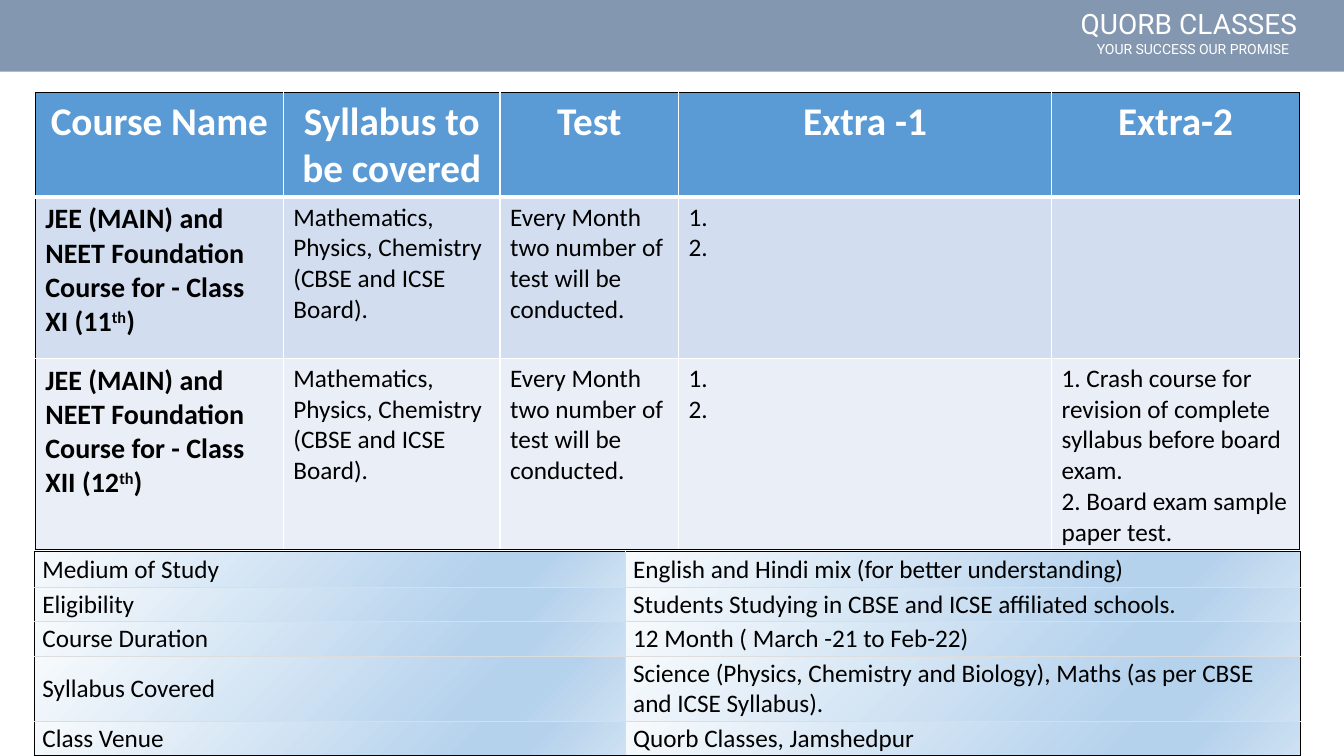
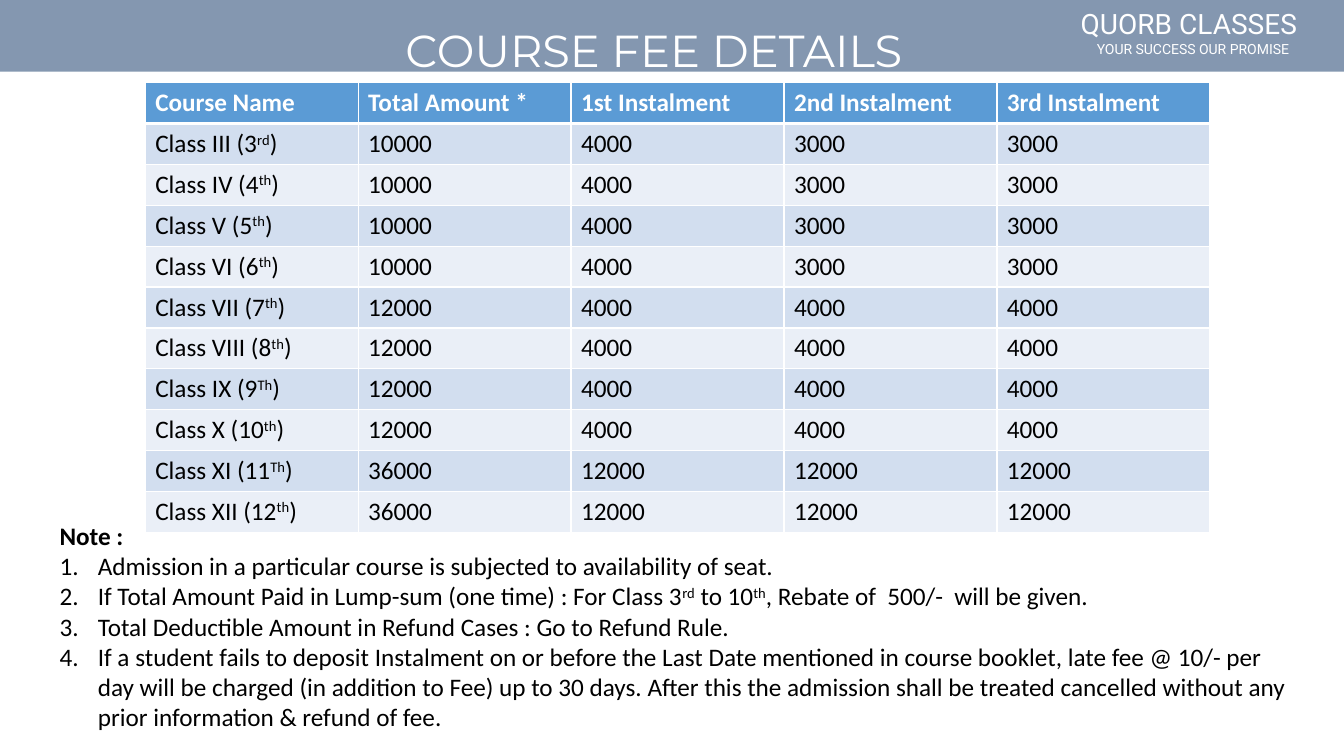
from lxml import etree
from pptx import Presentation
from pptx.dml.color import RGBColor
from pptx.enum.shapes import MSO_SHAPE
from pptx.enum.text import MSO_ANCHOR, MSO_AUTO_SIZE, PP_ALIGN
from pptx.oxml.ns import qn
from pptx.util import Inches, Pt

RECTANGLE = MSO_SHAPE.RECTANGLE
TOP, MIDDLE = MSO_ANCHOR.TOP, MSO_ANCHOR.MIDDLE
FIT_SHAPE, NO_FIT = MSO_AUTO_SIZE.SHAPE_TO_FIT_TEXT, MSO_AUTO_SIZE.NONE
LEFT, CENTER = PP_ALIGN.LEFT, PP_ALIGN.CENTER

SLIDE_WIDTH, SLIDE_HEIGHT = 13.33, 7.5
CONTENT_LAYOUT, BLANK_LAYOUT = 1, 6

WHITE = RGBColor(0xFF, 0xFF, 0xFF)
BLACK = RGBColor(0x00, 0x00, 0x00)
SLATE = RGBColor(0x84, 0x97, 0xB0)
HEADER_BLUE = RGBColor(0x5B, 0x9B, 0xD5)
BAND_DARK = RGBColor(0xD2, 0xDE, 0xEF)
BAND_LIGHT = RGBColor(0xEA, 0xEF, 0xF7)
GRID_GRAY = RGBColor(0xDD, 0xDD, 0xDD)
GRADIENT_STOPS = (
    (0, RGBColor(0xF7, 0xFA, 0xFD)),
    (74, RGBColor(0xB5, 0xD2, 0xEC)),
    (83, RGBColor(0xB5, 0xD2, 0xEC)),
    (100, RGBColor(0xCE, 0xE1, 0xF2)),
)
GRADIENT_ANGLE = 45

BODY_FONT = {"name": "Calibri", "size": Pt(18), "bold": False}
COURSE_FONT = {**BODY_FONT, "size": Pt(20), "bold": True}
HEADING_FONT = {**BODY_FONT, "bold": True}
BIG_HEADING_FONT = {**HEADING_FONT, "size": Pt(28)}
TITLE_FONT = {"name": "Montserrat", "size": Pt(32), "bold": False}
BRAND_FONT = {"name": "Roboto", "size": Pt(20)}
MOTTO_FONT = {"name": "Roboto", "size": Pt(10)}

THIN_WHITE, THICK_WHITE = (WHITE, 1), (WHITE, 3)
THIN_BLACK, THIN_GRAY = (BLACK, 1), (GRID_GRAY, 0.75)

SUBJECTS = "Mathematics, Physics, Chemistry (CBSE and ICSE Board)."
TESTS = "Every Month two number of test will be conducted."
COURSE_ROWS = [
    ["Course Name", "Syllabus to be covered", "Test", "Extra -1", "Extra-2"],
    ["JEE (MAIN) and NEET Foundation Course for - Class XI (11^th^)",
     SUBJECTS, TESTS, "1.\n2.", ""],
    ["JEE (MAIN) and NEET Foundation Course for - Class XII (12^th^)",
     SUBJECTS, TESTS, "1.\n2.",
     "1. Crash course for revision of complete syllabus before board exam.\n"
     "2. Board exam sample paper test."],
]
INFORMATION_ROWS = [
    ["Medium of Study", "English and Hindi mix (for better understanding)"],
    ["Eligibility", "Students Studying in CBSE and ICSE affiliated schools."],
    ["Course Duration", "12 Month ( March -21 to Feb-22)"],
    ["Syllabus Covered",
     "Science (Physics, Chemistry and Biology), Maths (as per CBSE and ICSE Syllabus)."],
    ["Class Venue", "Quorb Classes, Jamshedpur"],
]
FEE_HEADINGS = ["Course Name", "Total Amount *", "1st Instalment",
                "2nd Instalment", "3rd Instalment"]
FEE_GROUPS = [
    (["III (3^rd^)", "IV (4^th^)", "V (5^th^)", "VI (6^th^)"], [4000, 3000, 3000]),
    (["VII (7^th^)", "VIII (8^th^)", "IX (9^Th^)", "X (10^th^)"], [4000, 4000, 4000]),
    (["XI (11^Th^)", "XII (12^th^)"], [12000, 12000, 12000]),
]
NOTES = [
    "Admission in a particular course is subjected to availability of seat.",
    "If Total Amount Paid in Lump-sum (one time) : For Class 3^rd^ to 10^th^, "
    "Rebate of  500/-  will be given.",
    "Total Deductible Amount in Refund Cases : Go to Refund Rule.",
    "If a student fails to deposit Instalment on or before the Last Date mentioned in "
    "course booklet, late fee @ 10/- per day will be charged (in addition to Fee) up to "
    "30 days. After this the admission shall be treated cancelled without any prior "
    "information & refund of fee.",
]


def set_attributes(target, values):
    for name, value in values.items():
        setattr(target, name, value)


def write_paragraph(paragraph, text, font, color, align=LEFT):
    """Write text in which ^marks^ enclose superscripts."""
    paragraph.alignment = align
    for index, part in enumerate(text.split("^")):
        if not part:
            continue
        run = paragraph.add_run()
        run.text = part
        set_attributes(run.font, font)
        run.font.color.rgb = color
        if index % 2:
            run._r.get_or_add_rPr().set("baseline", "30000")


def write_lines(frame, lines, font, color, align=LEFT):
    for index, line in enumerate(lines):
        paragraph = frame.add_paragraph() if index else frame.paragraphs[0]
        write_paragraph(paragraph, line, font, color, align)


def place(shape, box):
    lengths = [Inches(value) for value in box]
    set_attributes(shape, dict(zip(("left", "top", "width", "height"), lengths)))


def add_color(parent, color):
    etree.SubElement(parent, qn("a:srgbClr"), val=str(color))


def set_borders(cell, borders):
    """Set the left, right, top and bottom lines, each a colour and a width."""
    properties = cell._tc.get_or_add_tcPr()
    for index, (side, (color, width)) in enumerate(zip("LRTB", borders)):
        line = etree.Element(qn(f"a:ln{side}"), w=str(Pt(width)))
        add_color(etree.SubElement(line, qn("a:solidFill")), color)
        properties.insert(index, line)


def set_gradient(cell):
    gradient = etree.SubElement(cell._tc.get_or_add_tcPr(), qn("a:gradFill"))
    stops = etree.SubElement(gradient, qn("a:gsLst"))
    for position, color in GRADIENT_STOPS:
        add_color(etree.SubElement(stops, qn("a:gs"), pos=str(position * 1000)), color)
    etree.SubElement(gradient, qn("a:lin"), ang=str(GRADIENT_ANGLE * 60000), scaled="0")


def add_grid(slide, box, column_widths, row_heights, rows):
    """Add an empty table and return it with its (row, column, cell, text) entries."""
    lengths = [Inches(value) for value in box]
    table = slide.shapes.add_table(len(rows), len(column_widths), *lengths).table
    table.horz_banding = False
    for column, width in zip(table.columns, column_widths):
        column.width = Inches(width)
    for row, height in zip(table.rows, row_heights):
        row.height = Inches(height)
    entries = [(row, column, table.cell(row, column), text)
               for row, texts in enumerate(rows) for column, text in enumerate(texts)]
    return table, entries


def frame_borders(row, column, last_row, last_column, inner, outer):
    """Give the cell's borders, with the outer line along the edge of the table."""
    return [outer if on_edge else inner for on_edge in
            (column == 0, column == last_column, row == 0, row == last_row)]


def add_banded_table(slide, box, column_widths, row_heights, rows,
                     heading_font, heading_align, first_font, outer):
    table, entries = add_grid(slide, box, column_widths, row_heights, rows)
    for row, column, cell, text in entries:
        borders = frame_borders(row, column, len(rows) - 1, len(column_widths) - 1,
                                THIN_WHITE, outer)
        if row == 0:
            fill, font, color, align = HEADER_BLUE, heading_font, WHITE, heading_align
            borders[3] = THICK_WHITE
        else:
            fill = BAND_DARK if row % 2 else BAND_LIGHT
            font = BODY_FONT if column else first_font
            color, align = BLACK, LEFT
        cell.fill.solid()
        cell.fill.fore_color.rgb = fill
        set_borders(cell, borders)
        write_lines(cell.text_frame, text.split("\n"), font, color, align)


def add_information_table(slide, box, column_widths, row_heights, rows):
    table, entries = add_grid(slide, box, column_widths, row_heights, rows)
    table.first_row = False
    cell_format = {"vertical_anchor": MIDDLE,
                   "margin_left": Inches(0.08), "margin_right": Inches(0.08),
                   "margin_top": Inches(0.02), "margin_bottom": Inches(0.02)}
    for row, column, cell, text in entries:
        set_attributes(cell, cell_format)
        set_gradient(cell)
        set_borders(cell, frame_borders(row, column, len(rows) - 1, 1,
                                        THIN_GRAY, THIN_BLACK))
        write_lines(cell.text_frame, [text], BODY_FONT, BLACK)


def add_brand_text(slide, box, text, font):
    shape = slide.shapes.add_textbox(*[Inches(value) for value in box])
    set_attributes(shape.text_frame, {"word_wrap": True, "auto_size": FIT_SHAPE})
    write_lines(shape.text_frame, [text], font, WHITE)
    return shape


def add_master_band(presentation, slide):
    """Build the band on a slide, then move it to the master all slides share."""
    band = slide.shapes.add_shape(RECTANGLE, 0, 0, Inches(SLIDE_WIDTH), Inches(0.71))
    band.shadow.inherit = False
    band.fill.solid()
    band.fill.fore_color.rgb = SLATE
    band.line.fill.background()
    brand = add_brand_text(slide, (10.62, 0.02, 3.08, 0.44), "QUORB CLASSES", BRAND_FONT)
    motto = add_brand_text(slide, (10.78, 0.35, 2.76, 0.27),
                           "YOUR SUCCESS OUR PROMISE", MOTTO_FONT)
    for number, shape in enumerate((band, brand, motto), start=101):
        shape.element.xpath(".//p:cNvPr")[0].set("id", str(number))
        presentation.slide_master.shapes.element.append(shape.element)


def fill_title(slide, box, text):
    title = slide.shapes.title
    place(title, box)
    set_attributes(title.text_frame, {"vertical_anchor": TOP, "auto_size": NO_FIT})
    write_lines(title.text_frame, [text], TITLE_FONT, WHITE)


def fill_notes(slide, box, heading, notes):
    body = slide.placeholders[1]
    place(body, box)
    frame = body.text_frame
    set_attributes(frame, {"vertical_anchor": TOP, "auto_size": NO_FIT})
    write_lines(frame, [heading], HEADING_FONT, BLACK)
    for note in notes:
        write_paragraph(frame.add_paragraph(), note, BODY_FONT, BLACK)
    for index, paragraph in enumerate(frame.paragraphs):
        paragraph.space_before = Pt(0)
        indent = Inches(0.38) if index else 0
        properties = paragraph._p.get_or_add_pPr()
        properties.set("marL", str(indent))
        properties.set("indent", str(-indent))
        if index:
            etree.SubElement(properties, qn("a:buFont"), typeface="+mj-lt")
            etree.SubElement(properties, qn("a:buAutoNum"), type="arabicPeriod")
        else:
            etree.SubElement(properties, qn("a:buNone"))


def fee_rows():
    rows = [FEE_HEADINGS]
    for classes, instalments in FEE_GROUPS:
        amounts = [str(amount) for amount in (sum(instalments), *instalments)]
        rows += [[f"Class {name}", *amounts] for name in classes]
    return rows


def build_course_slide(slide):
    add_banded_table(slide, (0.35, 0.92, 12.55, 4.53), (2.46, 2.15, 1.77, 3.7, 2.46),
                     (1.03, 1.6, 1.9), COURSE_ROWS,
                     BIG_HEADING_FONT, CENTER, COURSE_FONT, THIN_BLACK)
    add_information_table(slide, (0.34, 5.47, 12.56, 2.03), (5.86, 6.7),
                          (0.36, 0.34, 0.34, 0.65, 0.34), INFORMATION_ROWS)


def build_fee_slide(slide):
    rows = fee_rows()
    add_banded_table(slide, (1.44, 0.82, 10.56, 4.4), [10.56 / 5] * 5,
                     [4.4 / len(rows)] * len(rows), rows,
                     HEADING_FONT, LEFT, BODY_FONT, THIN_WHITE)
    fill_notes(slide, (0.49, 5.11, 12.44, 2.39), "Note :", NOTES)
    fill_title(slide, (3.92, 0.18, 5.78, 0.64), "COURSE FEE DETAILS")


def main():
    presentation = Presentation()
    presentation.slide_width = Inches(SLIDE_WIDTH)
    presentation.slide_height = Inches(SLIDE_HEIGHT)
    layouts = presentation.slide_layouts
    course_slide = presentation.slides.add_slide(layouts[BLANK_LAYOUT])
    add_master_band(presentation, course_slide)
    build_course_slide(course_slide)
    build_fee_slide(presentation.slides.add_slide(layouts[CONTENT_LAYOUT]))
    presentation.save("out.pptx")


if __name__ == "__main__":
    main()
